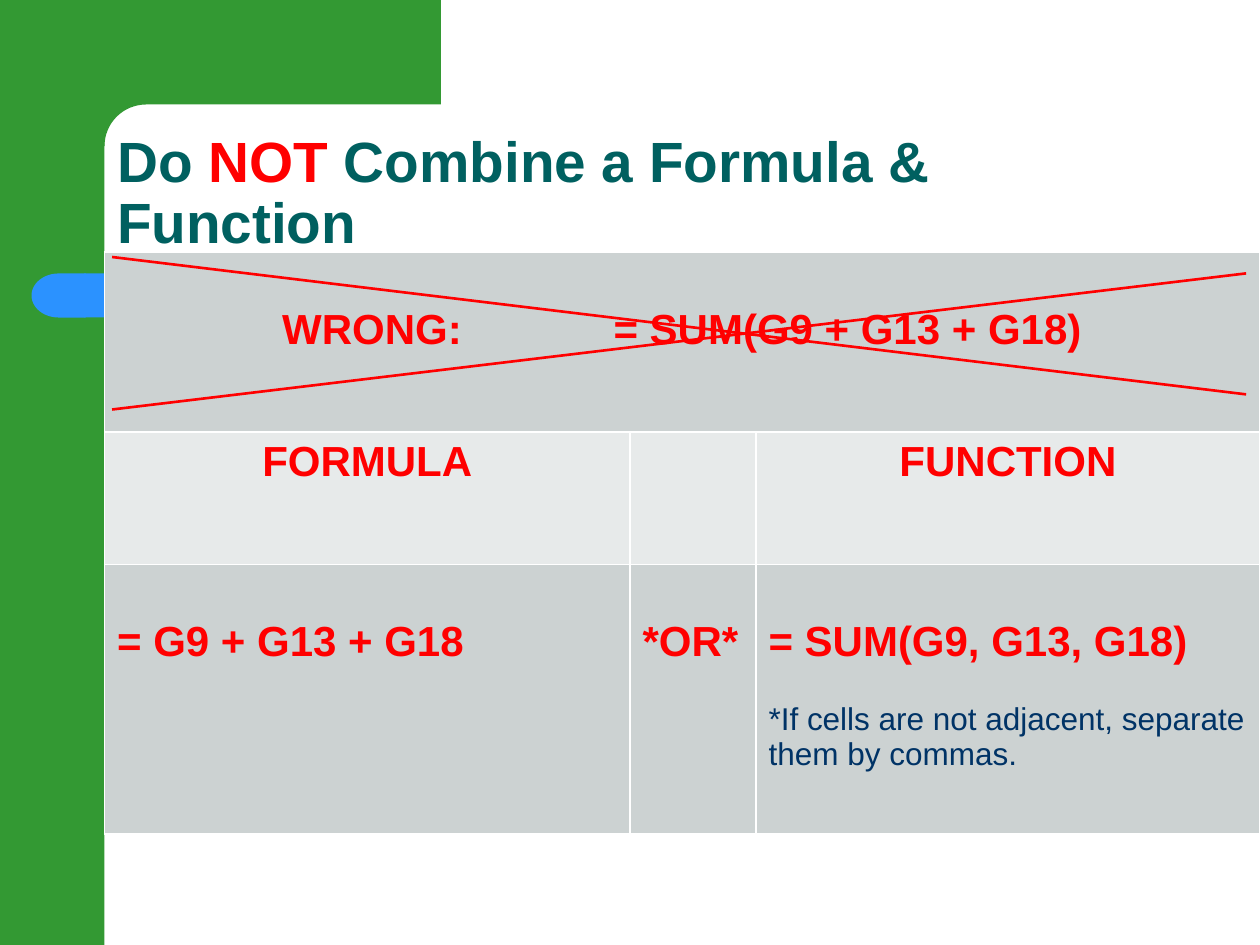
from math import cos, pi, sin

from lxml.etree import SubElement
from pptx import Presentation
from pptx.dml.color import RGBColor
from pptx.enum.shapes import MSO_CONNECTOR, MSO_SHAPE
from pptx.enum.text import MSO_ANCHOR, MSO_AUTO_SIZE, PP_ALIGN
from pptx.oxml import parse_xml
from pptx.oxml.ns import nsdecls, qn
from pptx.util import Inches, Pt

FONT = "Arial"
COLORS = {
    "green": "339933",
    "blue": "2B92FF",
    "teal": "006060",
    "red": "FF0000",
    "navy": "003366",
    "dark_row": "CCD2D2",
    "light_row": "E7EAEA",
    "border": "FFFFFF",
}


def color(name):
    return RGBColor.from_string(COLORS[name])


def add_run(paragraph, text, size=24, color_name="red", bold=True):
    run = paragraph.add_run()
    run.text = text
    run.font.name = FONT
    run.font.size = Pt(size)
    run.font.bold = bold
    run.font.color.rgb = color(color_name)


def paint(shape, color_name):
    shape.shadow.inherit = False
    shape.fill.solid()
    shape.fill.fore_color.rgb = color(color_name)
    shape.line.fill.background()


def add_block(slide, kind, box, color_name):
    shape = slide.shapes.add_shape(kind, *map(Inches, box))
    paint(shape, color_name)
    return shape


def add_frame(slide, left, top, width, height):
    """Green side band and top block joined by a rounded inner corner."""
    side, block_right, block_bottom, radius = 0.83, 3.5, 0.83, 0.33
    add_block(slide, MSO_SHAPE.RECTANGLE, (left, top, side, height), "green")

    center_x, center_y = left + side + radius, top + block_bottom + radius
    steps = 16
    angles = [pi / 2 * step / steps for step in range(steps + 1)]
    corner = [(center_x - radius * sin(a), center_y - radius * cos(a)) for a in angles]
    outline = [
        (left + block_right, top + block_bottom),
        *corner,
        (left + 0.5, center_y),
        (left + 0.5, top),
    ]
    builder = slide.shapes.build_freeform(
        Inches(left + block_right), Inches(top), scale=1.0)
    builder.add_line_segments([(Inches(x), Inches(y)) for x, y in outline], close=True)
    paint(builder.convert_to_shape(), "green")


def add_accent_bar(slide, left, top, width, height):
    """Blue bar with a rounded left end."""
    cap = 0.43
    add_block(slide, MSO_SHAPE.RECTANGLE,
              (left + cap - 0.01, top, width - cap, height), "blue")
    end = add_block(slide, MSO_SHAPE.FLOWCHART_DELAY, (left, top, cap, height), "blue")
    end.rotation = 180


def add_title(slide, left, top, width, height):
    title = slide.shapes.title
    title.left, title.top = Inches(left), Inches(top)
    title.width, title.height = Inches(width), Inches(height)
    frame = title.text_frame
    frame.word_wrap = True
    frame.auto_size = MSO_AUTO_SIZE.NONE
    frame.vertical_anchor = MSO_ANCHOR.BOTTOM
    paragraph = frame.paragraphs[0]
    paragraph.alignment = PP_ALIGN.LEFT
    paragraph.line_spacing = 0.9
    for text, color_name in (("Do ", "teal"), ("NOT", "red"),
                             (" Combine a Formula & Function", "teal")):
        add_run(paragraph, text, 32.4, color_name)


def style_cell(cell, fill_name):
    cell.fill.solid()
    cell.fill.fore_color.rgb = color(fill_name)
    properties = cell._tc.get_or_add_tcPr()
    for index, side in enumerate("LRTB"):
        properties.insert(index, parse_xml(
            f'<a:ln{side} {nsdecls("a")} w="12700"><a:solidFill>'
            f'<a:srgbClr val="{COLORS["border"]}"/></a:solidFill></a:ln{side}>'))


def add_comparison_table(slide, left, top, width, height):
    columns, rows = (4.17, 1, 4), (1.43, 1.05, 2.14)
    table = slide.shapes.add_table(
        len(rows), len(columns), *map(Inches, (left, top, width, height))).table
    table.first_row = table.horz_banding = False
    for column, size in zip(table.columns, columns):
        column.width = Inches(size)
    for row, size, fill_name in zip(table.rows, rows,
                                    ("dark_row", "light_row", "dark_row")):
        row.height = Inches(size)
        for cell in row.cells:
            style_cell(cell, fill_name)

    # Wrong example across the full width
    wrong = table.cell(0, 0)
    wrong.merge(table.cell(0, 2))
    wrong.margin_left, wrong.margin_top = Inches(1.41), Inches(0.43)
    paragraph = wrong.text_frame.paragraphs[0]
    tabs = SubElement(paragraph._p.get_or_add_pPr(), qn("a:tabLst"))
    SubElement(tabs, qn("a:tab"), pos=str(Inches(2.63)), algn="l")
    add_run(paragraph, "WRONG:\t= SUM(G9 + G13 + G18)")

    # Column headings
    for index, text in ((0, "FORMULA"), (2, "FUNCTION")):
        paragraph = table.cell(1, index).text_frame.paragraphs[0]
        paragraph.alignment = PP_ALIGN.CENTER
        add_run(paragraph, text)

    # Right examples
    for index, text in enumerate(("= G9 + G13 + G18", "*OR*", "= SUM(G9, G13, G18)")):
        cell = table.cell(2, index)
        cell.margin_top = Inches(0.43)
        add_run(cell.text_frame.paragraphs[0], text)
    note = table.cell(2, 2).text_frame.add_paragraph()
    note.space_before = Pt(20.7)
    add_run(note, "*If cells are not adjacent, separate them by commas.",
            18, "navy", False)


def add_cross(slide, left, top, width, height):
    """Two red strokes that cross out the wrong example."""
    right = left + width
    for start, end in ((top, top + 1.09), (top + height, top + 0.13)):
        line = slide.shapes.add_connector(
            MSO_CONNECTOR.STRAIGHT, *map(Inches, (left, start, right, end)))
        line.line.color.rgb = color("red")
        line.line.width = Pt(1.5)
        SubElement(line._element.spPr, qn("a:effectLst"))


def main():
    presentation = Presentation()
    presentation.slide_width, presentation.slide_height = Inches(10), Inches(7.5)
    slide = presentation.slides.add_slide(presentation.slide_layouts[5])
    add_frame(slide, 0, 0, 10, 7.5)
    add_accent_bar(slide, 0.25, 2.17, 8.09, 0.35)
    add_title(slide, 0.83, 0.83, 8.67, 1.25)
    add_comparison_table(slide, 0.83, 2, 9.17, 4.62)
    add_cross(slide, 0.89, 2.04, 9, 1.21)
    presentation.save("out.pptx")


if __name__ == "__main__":
    main()
